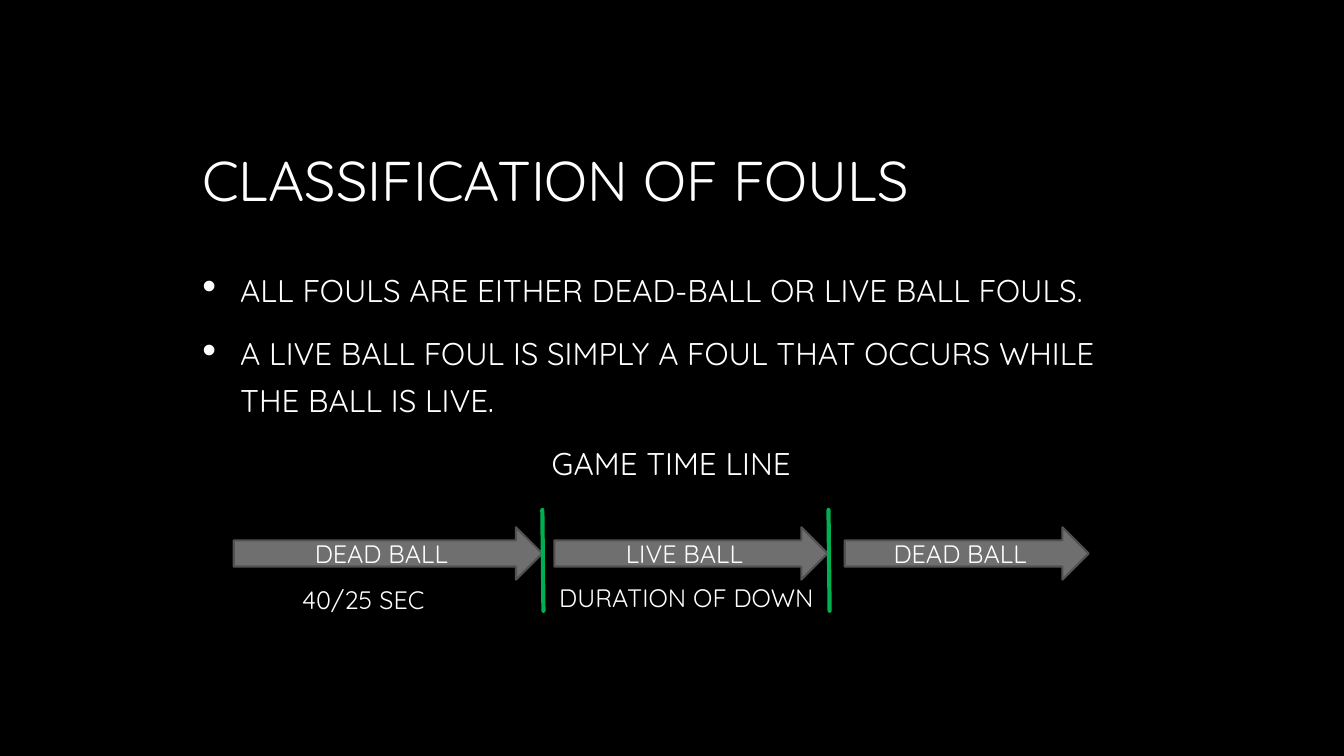
from dataclasses import dataclass

from lxml import etree
from pptx import Presentation
from pptx import util as u
from pptx.dml.color import RGBColor
from pptx.enum import shapes, text
from pptx.oxml import ns

Pt = u.Pt


@dataclass(frozen=True)
class Theme:
    font: str = "Quicksand"
    background: str = "000000"
    white: str = "FFFFFF"
    title_fade: str = "A6A6A6"
    body_fade: str = "BFBFBF"
    arrow: str = "6F6F6F"
    arrow_line: str = "525252"
    divider: str = "00B050"
    title_size: int = 40
    body_size: int = 28
    label_size: int = 18


T = Theme()


def rgb(value):
    return RGBColor.from_string(value)


def style_run(p, size, fade=None, angle=270):
    """Format a paragraph's run in white, or fading from white to a grey."""
    r = p.runs[0]
    r.font.name, r.font.size = T.font, Pt(size)
    if fade is None:
        r.font.color.rgb = rgb(T.white)
        return r
    r.font.fill.gradient()
    r.font.fill.gradient_angle = angle
    for stop, color in zip(r.font.fill.gradient_stops, (T.white, fade)):
        stop.color.rgb = rgb(color)
    return r


def add_text_box(parent, box):
    tf = parent.add_textbox(*map(Pt, box)).text_frame
    tf.word_wrap = True
    return tf


def add_bullet(p):
    pPr = p._p.get_or_add_pPr()
    pPr.set("marL", str(Pt(27)))
    pPr.set("indent", str(-Pt(27)))
    color = etree.SubElement(pPr, ns.qn("a:buClr"))
    etree.SubElement(color, ns.qn("a:srgbClr"), val=T.white)
    etree.SubElement(pPr, ns.qn("a:buFont"), typeface="Arial")
    etree.SubElement(pPr, ns.qn("a:buChar"), char="•")


# Title
def add_title(s, box):
    tf = add_text_box(s.shapes, box)
    tf.vertical_anchor = text.MSO_ANCHOR.BOTTOM
    tf.text = "CLASSIFICATION OF FOULS"
    style_run(tf.paragraphs[0], T.title_size, T.title_fade, 267)


# Bullets and the timeline heading
def add_body(s, box):
    lines = (
        ("all fouls are either dead-ball or live ball fouls.", True),
        ("a live ball foul is simply a foul that occurs while the ball is live.", True),
        ("game time line", False),
    )
    tf = add_text_box(s.shapes, box)
    tf.text = "\n".join(line for line, _ in lines)
    for p, (_, bulleted) in zip(tf.paragraphs, lines):
        p.line_spacing = Pt(33.5)
        p.space_before, p.space_after = Pt(5.6), Pt(6)
        if bulleted:
            add_bullet(p)
        else:
            p.alignment = text.PP_ALIGN.CENTER
        r = style_run(p, T.body_size, T.body_fade)
        r._r.get_or_add_rPr().set("cap", "small")


# Timeline parts
def add_arrow(group, box, label):
    sp = group.add_shape(shapes.MSO_SHAPE.RIGHT_ARROW, *map(Pt, box))
    sp.shadow.inherit = False
    sp.fill.solid()
    sp.fill.fore_color.rgb = rgb(T.arrow)
    sp.line.color.rgb = rgb(T.arrow_line)
    sp.line.width = Pt(1.5)
    tf = sp.text_frame
    tf.word_wrap = True
    tf.vertical_anchor = text.MSO_ANCHOR.MIDDLE
    tf.text = label
    p = tf.paragraphs[0]
    p.alignment = text.PP_ALIGN.CENTER
    style_run(p, T.label_size)


def add_divider(group, x, y, height):
    line = group.add_connector(
        shapes.MSO_CONNECTOR.STRAIGHT, Pt(x), Pt(y), Pt(x + 0.8), Pt(y + height))
    line.line.color.rgb = rgb(T.divider)
    line.line.width = Pt(3)
    line.line._get_or_add_ln().set("cap", "rnd")
    etree.SubElement(line._element.spPr, ns.qn("a:effectLst"))


def add_caption(group, box, label):
    tf = add_text_box(group, box)
    tf.text = label
    style_run(tf.paragraphs[0], T.label_size)


# Timeline
def add_timeline(s, box):
    left, top, _, height = box
    group = s.shapes.add_group_shape().shapes
    for x, width, label in ((0, 220.3, "DEAD BALL"),
                            (229, 195.1, "LIVE BALL"),
                            (436.4, 174.2, "DEAD BALL")):
        add_arrow(group, (left + x, top + 12.3, width, 37.4), label)
    for x in (220.4, 424.8):
        add_divider(group, left + x, top, height)
    for x, y, width, label in ((41.8, 49.7, 133.2, "40/25 SEC"),
                               (225.4, 48.3, 201.6, "DURATION OF DOWN")):
        add_caption(group, (left + x, top + y, width, 28.8), label)


def main():
    prs = Presentation()
    prs.slide_width, prs.slide_height = Pt(960), Pt(540)
    s = prs.slides.add_slide(prs.slide_layouts[6])
    s.background.fill.solid()
    s.background.fill.fore_color.rgb = rgb(T.background)
    add_title(s, (137.5, 52.6, 684, 103))
    add_body(s, (137.5, 184.3, 684, 310.3))
    add_timeline(s, (167, 364.3, 610.6, 72))
    prs.save("out.pptx")


if __name__ == "__main__":
    main()
